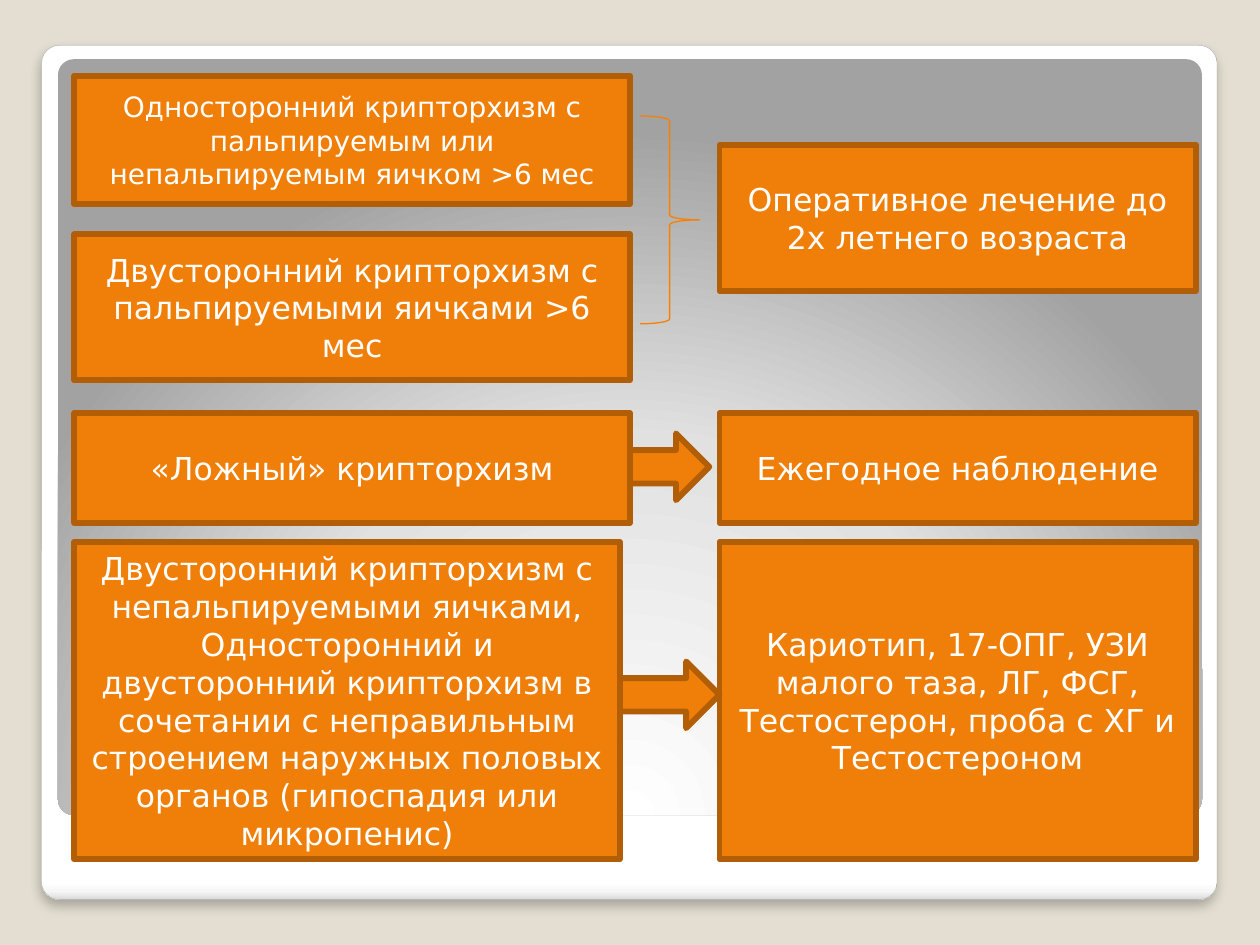
from typing import NamedTuple

from lxml.etree import SubElement
from pptx import Presentation
from pptx.dml.color import RGBColor
from pptx.enum.shapes import MSO_SHAPE
from pptx.enum.text import MSO_ANCHOR, PP_ALIGN
from pptx.oxml import parse_xml
from pptx.oxml.ns import nsdecls, qn
from pptx.util import Inches, Pt

ORANGE, BROWN, WHITE = "F07F09", "B25E07", "FFFFFF"
LEFT, RIGHT = 0.59, 5.71
WIDE, SLIM = 4.41, 3.78


class Area(NamedTuple):
    x: float
    y: float
    w: float
    h: float


class Box(NamedTuple):
    area: Area
    lines: list[str]
    size: int = 18


BOXES = [
    Box(Area(LEFT, 0.6, WIDE, 1.02),
        ["Односторонний крипторхизм с пальпируемым или непальпируемым яичком >6 мес"], 16),
    Box(Area(RIGHT, 1.15, SLIM, 1.16), ["Оперативное лечение до 2х летнего возраста"]),
    Box(Area(LEFT, 1.86, WIDE, 1.16),
        ["Двусторонний крипторхизм с пальпируемыми яичками >6 мес"]),
    Box(Area(LEFT, 3.28, WIDE, 0.87), ["«Ложный» крипторхизм"]),
    Box(Area(LEFT, 4.3, 4.33, 2.52),
        ["Двусторонний крипторхизм с непальпируемыми яичками,",
         "Односторонний и двусторонний крипторхизм в сочетании с неправильным "
         "строением наружных половых органов (гипоспадия или микропенис)"]),
    Box(Area(RIGHT, 3.28, SLIM, 0.87), ["Ежегодное наблюдение"]),
    Box(Area(RIGHT, 4.3, SLIM, 2.52),
        ["Кариотип, 17-ОПГ, УЗИ малого таза, ЛГ, ФСГ, Тестостерон, "
         "проба с ХГ и Тестостероном"]),
]
ARROWS = [Area(5, 3.44, 0.63, 0.53), Area(4.92, 5.25, 0.79, 0.53)]


def paint(form, color: str) -> None:
    """Set a solid colour on a fill."""
    form.solid()
    form.fore_color.rgb = RGBColor.from_string(color)


def draw(slide, kind, area: Area, fill: str = "", line: str = "", width: float = 3.35):
    """Add a preset shape; an empty colour means no fill or no line."""
    shape = slide.shapes.add_shape(kind, *map(Inches, area))
    shape.shadow.inherit = False
    for form, color in ((shape.fill, fill), (shape.line.fill, line)):
        if color:
            paint(form, color)
        else:
            form.background()
    if line:
        shape.line.width = Pt(width)
    return shape


def write(shape, lines: list[str], *, size: int, color: str = WHITE,
          font: str = "DejaVu Sans") -> None:
    frame = shape.text_frame
    frame.word_wrap = True
    frame.vertical_anchor = MSO_ANCHOR.MIDDLE
    frame.text = "\n".join(lines)
    for para in frame.paragraphs:
        para.alignment = PP_ALIGN.CENTER
        para.font.size = Pt(size)
        para.font.name = font
        paint(para.font.fill, color)


def blend(shape, stops: list[tuple[int, str]], shade: str) -> None:
    """Replace the fill by a gradient with the given shade element."""
    marks = "".join(f'<a:gs pos="{pos * 1000}"><a:srgbClr val="{color}"/></a:gs>'
                    for pos, color in stops)
    grad = parse_xml(f'<a:gradFill {nsdecls("a")} rotWithShape="1">'
                     f"<a:gsLst>{marks}</a:gsLst>{shade}</a:gradFill>")
    props = shape._element.spPr
    props.replace(props.find(qn("a:noFill")), grad)


def shade_under(shape, color: str, alpha: int, blur: float, dist: float) -> None:
    """Cast a soft shadow straight down."""
    effect = shape._element.spPr.find(qn("a:effectLst"))
    outer = SubElement(effect, qn("a:outerShdw"), blurRad=str(Pt(blur)),
                       dist=str(Pt(dist)), dir="5400000", rotWithShape="0")
    tint = SubElement(outer, qn("a:srgbClr"), val=color)
    SubElement(tint, qn("a:alpha"), val=str(alpha * 1000))


def draw_frame(slide) -> None:
    card = draw(slide, MSO_SHAPE.ROUNDED_RECTANGLE, Area(0.33, 0.36, 9.33, 6.78),
                line="A4A4A4", width=0.16)
    blend(card, [(0, WHITE), (98, WHITE), (99, "F7F7F7"), (100, "DADADA")],
          '<a:lin ang="5400000" scaled="0"/>')
    shade_under(card, "000000", alpha=25, blur=6, dist=4)
    panel = draw(slide, MSO_SHAPE.ROUNDED_RECTANGLE, Area(0.46, 0.47, 9.08, 6))
    blend(panel, [(0, WHITE), (55, "E1E1E1"), (100, "A2A2A2")],
          '<a:path path="circle"><a:fillToRect l="50000" t="175000" '
          'r="50000" b="-75000"/></a:path>')
    for shape in (card, panel):
        shape.adjustments[0] = 0.021


def main() -> None:
    deck = Presentation()
    deck.slide_width, deck.slide_height = Inches(10), Inches(7.5)
    slide = deck.slides.add_slide(deck.slide_layouts[6])
    paint(slide.background.fill, "E3DED1")
    draw_frame(slide)
    for box in BOXES:
        shape = draw(slide, MSO_SHAPE.RECTANGLE, box.area, ORANGE, BROWN)
        write(shape, box.lines, size=box.size)
    draw(slide, MSO_SHAPE.RIGHT_BRACE, Area(5.08, 0.92, 0.47, 1.65),
         line="F97F00", width=0.75)
    for area in ARROWS:
        draw(slide, MSO_SHAPE.RIGHT_ARROW, area, ORANGE, BROWN)
    deck.save("out.pptx")


if __name__ == "__main__":
    main()
